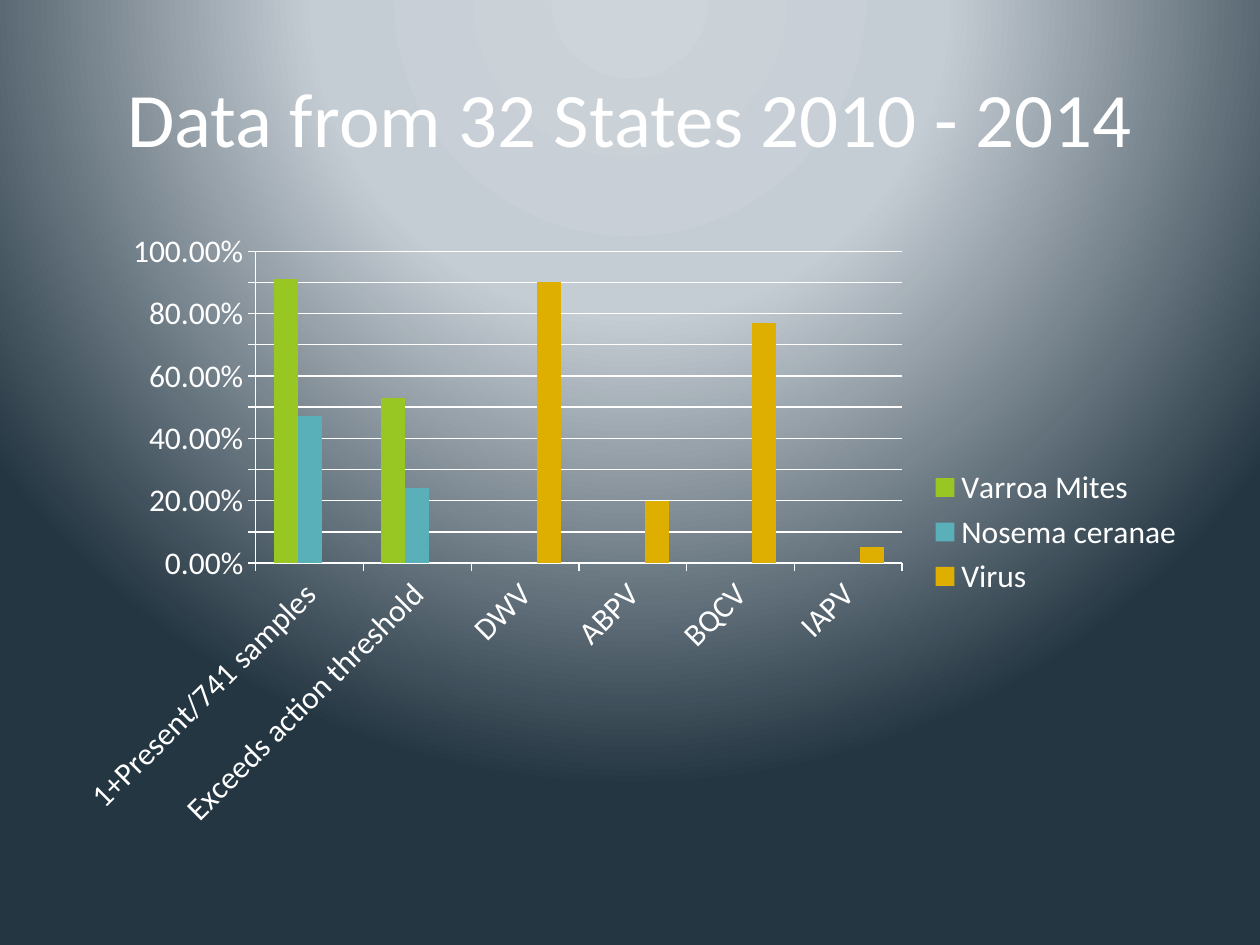
from lxml import etree
from pptx import Presentation
from pptx.chart.data import CategoryChartData
from pptx.dml.color import RGBColor
from pptx.enum.chart import XL_CHART_TYPE, XL_LEGEND_POSITION, XL_TICK_MARK
from pptx.enum.text import MSO_ANCHOR, PP_ALIGN
from pptx.oxml.ns import qn
from pptx.util import Pt

COLUMNS = XL_CHART_TYPE.COLUMN_CLUSTERED
LEGEND_RIGHT = XL_LEGEND_POSITION.RIGHT
TICK_OUT = XL_TICK_MARK.OUTSIDE
MIDDLE = MSO_ANCHOR.MIDDLE
CENTER = PP_ALIGN.CENTER

EMU_PER_PX = 914400 / 126
FONT = "Calibri"
COLORS = {
    "white": "FFFFFF",
    "glow": "CDD4DA",
    "haze": "C5CDD4",
    "night": "243642",
    "varroa": "98C723",
    "nosema": "59B0B9",
    "virus": "DEAE00",
}
CATEGORIES = ["1+Present/741 samples", "Exceeds action threshold",
              "DWV", "ABPV", "BQCV", "IAPV"]
INFECTIONS = [
    ("Varroa Mites", "varroa", [0.91, 0.53, None, None, None, None]),
    ("Nosema ceranae", "nosema", [0.47, 0.24, None, None, None, None]),
    ("Virus", "virus", [None, None, 0.9, 0.2, 0.77, 0.05]),
]


def px(length):
    return round(length * EMU_PER_PX)


def rgb(name):
    return RGBColor.from_string(COLORS[name])


def style_font(font, size, color="white"):
    font.name = FONT
    font.size = Pt(size)
    font.color.rgb = rgb(color)


def paint_background(slide, stops):
    """Radial gradient centred above the top edge."""
    fill = slide.background.fill
    fill.gradient()
    gradient = slide.background._cSld.find(".//" + qn("a:gradFill"))
    for child in list(gradient):
        gradient.remove(child)
    stop_list = etree.SubElement(gradient, qn("a:gsLst"))
    for percent, color in stops:
        stop = etree.SubElement(stop_list, qn("a:gs"), pos=str(percent * 1000))
        etree.SubElement(stop, qn("a:srgbClr"), val=COLORS[color])
    circle = etree.SubElement(gradient, qn("a:path"))
    circle.set("path", "circle")
    etree.SubElement(circle, qn("a:fillToRect"),
                     l="50000", t="-80000", r="50000", b="180000")


def add_text(slide, text, left, top, width, height, *, size, color="white",
             align=CENTER, anchor=MIDDLE):
    box = slide.shapes.add_textbox(px(left), px(top), px(width), px(height))
    frame = box.text_frame
    frame.word_wrap = True
    frame.vertical_anchor = anchor
    paragraph = frame.paragraphs[0]
    paragraph.alignment = align
    run = paragraph.add_run()
    run.text = text
    style_font(run.font, size, color)


def style_line(line):
    line.color.rgb = rgb("white")
    line.width = Pt(0.75)


def place_plot(chart, **fractions):
    """Fix the inner plot area as fractions of the chart."""
    plot_area = chart._chartSpace.find(".//" + qn("c:plotArea"))
    layout = plot_area.find(qn("c:layout"))
    if layout is None:
        layout = etree.Element(qn("c:layout"))
        plot_area.insert(0, layout)
    manual = etree.SubElement(layout, qn("c:manualLayout"))
    settings = {"layoutTarget": "inner", "xMode": "edge", "yMode": "edge", **fractions}
    for tag, value in settings.items():
        etree.SubElement(manual, qn("c:" + tag), val=str(value))


def add_infection_chart(slide, left, top, width, height):
    data = CategoryChartData(number_format="0.00%")
    data.categories = CATEGORIES
    for name, _, rates in INFECTIONS:
        data.add_series(name, rates)
    chart = slide.shapes.add_chart(
        COLUMNS, px(left), px(top), px(width), px(height), data).chart
    chart.has_title = False
    style_font(chart.font, 18)

    # Columns
    plot = chart.plots[0]
    plot.gap_width = 150
    plot.overlap = 0
    plot.vary_by_categories = False
    for series, (_, color, _) in zip(plot.series, INFECTIONS):
        series.format.fill.solid()
        series.format.fill.fore_color.rgb = rgb(color)
        series.invert_if_negative = False

    # Axes
    for axis in (chart.category_axis, chart.value_axis):
        axis.major_tick_mark = TICK_OUT
        style_line(axis.format.line)
        style_font(axis.tick_labels.font, 18)
    slant = chart.category_axis._element.find(".//" + qn("a:bodyPr"))
    slant.set("rot", "-2700000")
    rates_axis = chart.value_axis
    rates_axis.minimum_scale = 0
    rates_axis.maximum_scale = 1
    rates_axis.major_unit = 0.1
    rates_axis.has_major_gridlines = True
    style_line(rates_axis.major_gridlines.format.line)
    rates_axis.tick_labels.number_format = "0.00%"
    rates_axis.tick_labels.number_format_is_linked = False

    # Legend
    chart.has_legend = True
    chart.legend.position = LEGEND_RIGHT
    chart.legend.include_in_layout = False
    style_font(chart.legend.font, 18)
    place_plot(chart, x=0.17, y=0.05, w=0.57, h=0.5)


def main():
    deck = Presentation()
    deck.slide_width, deck.slide_height = px(1260), px(945)
    slide = deck.slides.add_slide(deck.slide_layouts[6])
    paint_background(slide, [(0, "glow"), (40, "haze"), (100, "night")])
    add_text(slide, "Data from 32 States 2010 - 2014", 63, 38, 1134, 158, size=44)
    add_infection_chart(slide, 63, 220, 1134, 624)
    deck.save("out.pptx")


if __name__ == "__main__":
    main()
